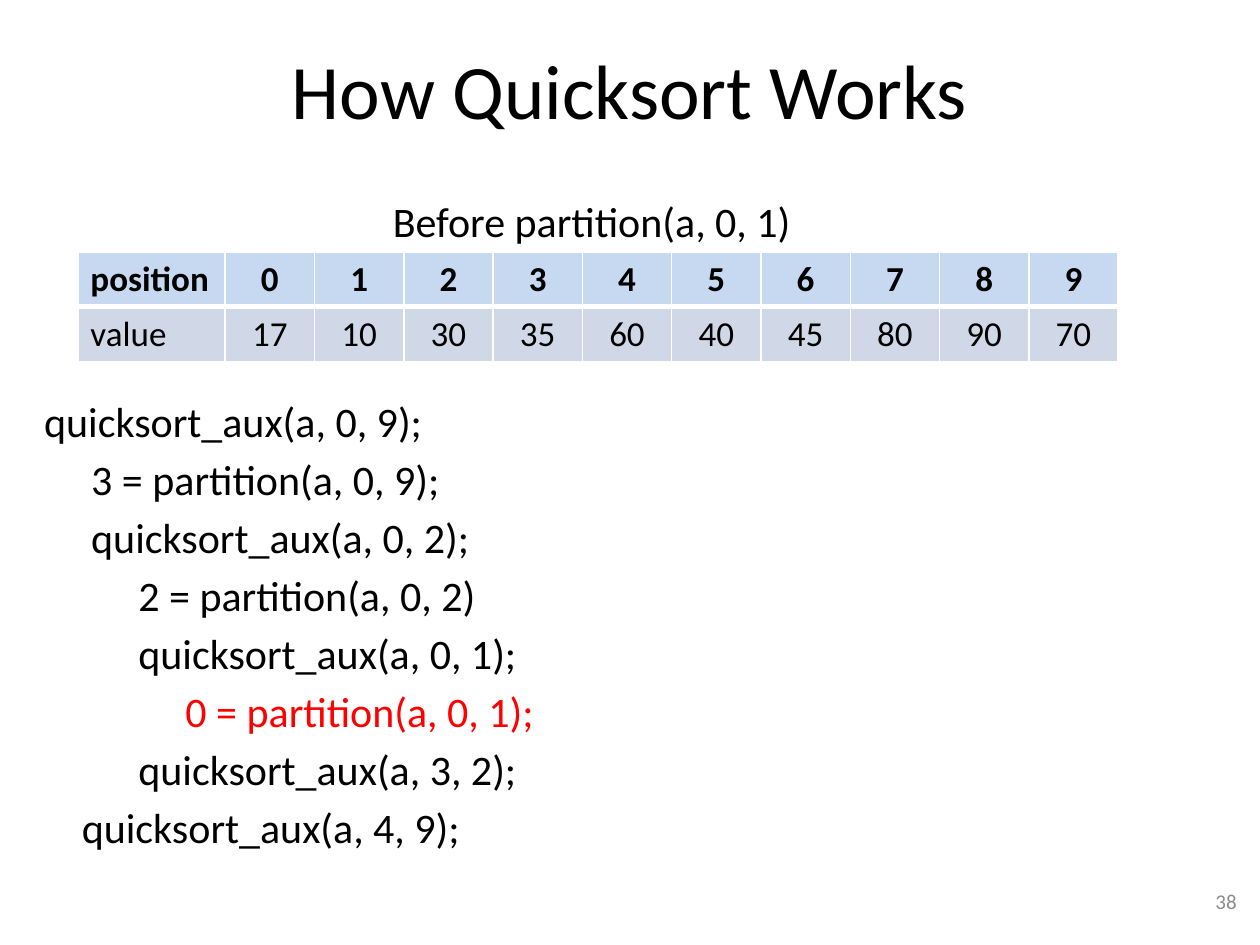
from lxml import etree
from pptx import Presentation
from pptx.dml.color import RGBColor
from pptx.enum.text import MSO_ANCHOR, MSO_AUTO_SIZE, PP_ALIGN
from pptx.oxml.ns import qn
from pptx.util import Cm, Pt

LEFT, MID, RIGHT = PP_ALIGN.LEFT, PP_ALIGN.CENTER, PP_ALIGN.RIGHT
TOP, CENTER = MSO_ANCHOR.TOP, MSO_ANCHOR.MIDDLE
GROW = MSO_AUTO_SIZE.SHAPE_TO_FIT_TEXT

VALUES = [17, 10, 30, 35, 60, 40, 45, 80, 90, 70]
SPACE = 0.19  # cm, one space of indent
CALLS = [  # indent in spaces, call, colour
    (0, "quicksort_aux(a, 0, 9);", "000000"),
    (5, "3 = partition(a, 0, 9);", "000000"),
    (5, "quicksort_aux(a, 0, 2);", "000000"),
    (10, "2 = partition(a, 0, 2)", "000000"),
    (10, "quicksort_aux(a, 0, 1);", "000000"),
    (15, "0 = partition(a, 0, 1);", "FF0000"),
    (10, "quicksort_aux(a, 3, 2);", "000000"),
    (4, "quicksort_aux(a, 4, 9);", "000000"),
]


def color(code):
    return RGBColor.from_string(code)


def add_run(para, text, size, code="000000", bold=False):
    run = para.add_run()
    run.text = text
    font = run.font
    font.name, font.size, font.bold = "Calibri", Pt(size), bold
    font.color.rgb = color(code)


def add_frame(slide, box, anchor=TOP, wrap=True):
    frame = slide.shapes.add_textbox(*map(Cm, box)).text_frame
    frame.word_wrap = wrap
    frame.vertical_anchor = anchor
    return frame


def add_label(slide, box, text, size, align, code="000000", anchor=CENTER):
    para = add_frame(slide, box, anchor).paragraphs[0]
    para.alignment = align
    add_run(para, text, size, code)


def add_caption(slide, box, text):
    frame = add_frame(slide, box, wrap=False)
    frame.auto_size = GROW
    add_run(frame.paragraphs[0], text, 24)


def add_calls(slide, box):
    frame = add_frame(slide, box)
    for i, (depth, text, code) in enumerate(CALLS):
        para = frame.add_paragraph() if i else frame.paragraphs[0]
        para.space_before = Pt(4.3)
        para._p.get_or_add_pPr().set("marL", str(Cm(depth * SPACE)))
        add_run(para, text, 24, code)


def set_cell(cell, text, align, fill, bold, base):
    """Fill one cell; base is the width of its bottom border in points."""
    para = cell.text_frame.paragraphs[0]
    para.alignment = align
    add_run(para, text, 20, bold=bold)
    props = cell._tc.get_or_add_tcPr()
    for side, width in (("L", 1), ("R", 1), ("T", 1), ("B", base)):
        line = etree.SubElement(props, qn("a:ln" + side), w=str(Pt(width)))
        solid = etree.SubElement(line, qn("a:solidFill"))
        etree.SubElement(solid, qn("a:srgbClr"), val="FFFFFF")
    cell.fill.solid()
    cell.fill.fore_color.rgb = color(fill)


def add_array(slide, box):
    left, top, width, height = box
    rows = [["position", *range(len(VALUES))], ["value", *VALUES]]
    table = slide.shapes.add_table(2, len(rows[0]), *map(Cm, box)).table
    first = 2.97
    step = (width - first) / len(VALUES)
    for i, col in enumerate(table.columns):
        col.width = Cm(step if i else first)
    styles = [("C6D9F1", True, 3), ("D0D8E8", False, 1)]
    for r, (row, style) in enumerate(zip(rows, styles)):
        table.rows[r].height = Cm(height / 2)
        for c, item in enumerate(row):
            set_cell(table.cell(r, c), str(item), MID if c else LEFT, *style)
    # The header's thick rule is shared with the row below.
    for cell in table.rows[1].cells:
        cell._tc.tcPr.find(qn("a:lnT")).set("w", str(Pt(3)))


def main():
    deck = Presentation()
    deck.slide_width, deck.slide_height = Cm(25.4), Cm(19.05)
    slide = deck.slides.add_slide(deck.slide_layouts[6])
    add_label(slide, (1.27, 0.2, 22.86, 3.18), "How Quicksort Works", 44, MID)
    add_calls(slide, (0.64, 7.85, 22.86, 9.93))
    add_label(slide, (19.25, 17.65, 5.93, 1.02), "38", 12, RIGHT, "8C8C8C")
    add_array(slide, (1.57, 5.08, 20.97, 2.2))
    add_caption(slide, (7.67, 3.81, 8.61, 1.27), "Before partition(a, 0, 1)")
    deck.save("out.pptx")


if __name__ == "__main__":
    main()
